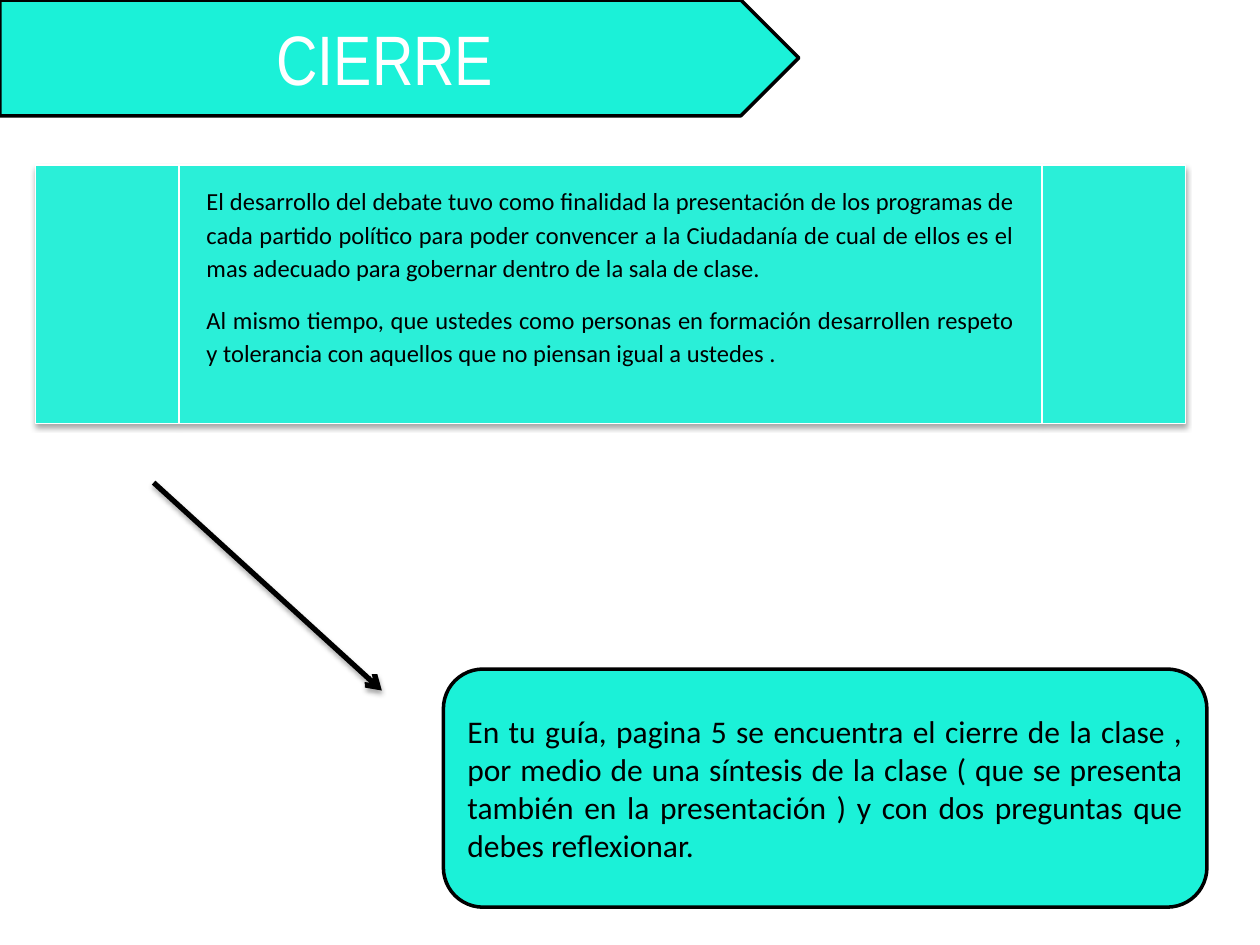
from dataclasses import dataclass
from typing import Optional

from lxml import etree
from pptx import Presentation
from pptx.dml.color import RGBColor
from pptx.enum import shapes, text
from pptx.oxml import ns
from pptx.util import Pt


@dataclass(frozen=True)
class Theme:
    turquoise: str = "1BF1D8"
    soft_turquoise: str = "2AEFD8"
    black: str = "000000"
    white: str = "FFFFFF"
    title_font: str = "Arial Narrow"
    body_font: str = "Calibri"
    title_size: float = 40
    debate_size: float = 14
    guide_size: float = 18


@dataclass(frozen=True)
class Box:
    """A filled shape; lengths in points."""
    kind: shapes.MSO_SHAPE
    left: float
    top: float
    width: float
    height: float
    fill: str
    line: str
    line_width: float
    shadow: bool = False


THEME = Theme()
KINDS = shapes.MSO_SHAPE
ALIGN = text.PP_ALIGN

TITLE_BANNER = Box(KINDS.PENTAGON, 0, 0, 456.5, 66.2, THEME.turquoise, THEME.black, 2)
DEBATE_PANEL = Box(KINDS.FLOWCHART_PREDEFINED_PROCESS, 20.2, 94.3, 657.4, 147.6,
                   THEME.soft_turquoise, THEME.white, 0.75, shadow=True)
GUIDE_BOX = Box(KINDS.ROUNDED_RECTANGLE, 253.4, 382.3, 436.3, 136.1,
                THEME.turquoise, THEME.black, 2)

DEBATE_TEXT = [
    "El desarrollo del debate tuvo como finalidad la presentación de los programas de cada "
    "partido político para poder convencer a la Ciudadanía de cual de ellos es el mas "
    "adecuado para gobernar dentro de la sala de clase.",
    "Al mismo tiempo, que ustedes como personas en formación desarrollen respeto y "
    "tolerancia con aquellos que no piensan igual a ustedes .",
]
GUIDE_TEXT = [
    "En tu guía, pagina 5 se encuentra el cierre de la clase , por medio de una síntesis de "
    "la clase ( que se presenta también en la presentación ) y con dos preguntas que debes "
    "reflexionar.",
]


def add_shadow(shape) -> None:
    """Give a shape or connector a soft shadow straight below it."""
    properties = shape._element.spPr
    effects = properties.find(ns.qn("a:effectLst"))
    if effects is None:
        effects = etree.SubElement(properties, ns.qn("a:effectLst"))
    shadow = etree.SubElement(effects, ns.qn("a:outerShdw"), blurRad=str(Pt(3.1)),
                              dist=str(Pt(1.8)), dir="5400000", rotWithShape="0")
    color = etree.SubElement(shadow, ns.qn("a:srgbClr"), val=THEME.black)
    etree.SubElement(color, ns.qn("a:alpha"), val="35000")


def add_box(slide, box: Box):
    shape = slide.shapes.add_shape(box.kind, Pt(box.left), Pt(box.top),
                                   Pt(box.width), Pt(box.height))
    shape.fill.solid()
    shape.fill.fore_color.rgb = RGBColor.from_string(box.fill)
    shape.line.color.rgb = RGBColor.from_string(box.line)
    shape.line.width = Pt(box.line_width)
    shape.shadow.inherit = False
    if box.shadow:
        add_shadow(shape)
    return shape


def write(shape, paragraphs: list[str], *, font: str, size: float,
          color: str = THEME.black, align: text.PP_ALIGN = ALIGN.JUSTIFY,
          anchor: text.MSO_ANCHOR = text.MSO_ANCHOR.MIDDLE,
          line_spacing: Optional[float] = None, space_after: float = 0) -> None:
    frame = shape.text_frame
    frame.word_wrap = True
    frame.vertical_anchor = anchor
    for index, content in enumerate(paragraphs):
        paragraph = frame.add_paragraph() if index else frame.paragraphs[0]
        paragraph.alignment = align
        paragraph.line_spacing = line_spacing
        paragraph.space_after = Pt(space_after)
        run = paragraph.add_run()
        run.text = content
        run.font.name = font
        run.font.size = Pt(size)
        run.font.color.rgb = RGBColor.from_string(color)


def add_arrow(slide, start: tuple[float, float], end: tuple[float, float],
              width: float) -> None:
    arrow = slide.shapes.add_connector(shapes.MSO_CONNECTOR.STRAIGHT,
                                       *map(Pt, start + end))
    arrow.line.color.rgb = RGBColor.from_string(THEME.black)
    arrow.line.width = Pt(width)
    etree.SubElement(arrow.line._get_or_add_ln(), ns.qn("a:tailEnd"), type="arrow")
    add_shadow(arrow)


def main() -> None:
    presentation = Presentation()
    presentation.slide_width, presentation.slide_height = Pt(720), Pt(540)
    slide = presentation.slides.add_slide(presentation.slide_layouts[6])

    # Title banner
    write(add_box(slide, TITLE_BANNER), ["CIERRE"], font=THEME.title_font,
          size=THEME.title_size, color=THEME.white, align=ALIGN.CENTER)

    # Purpose of the debate
    add_box(slide, DEBATE_PANEL)
    debate = slide.shapes.add_textbox(Pt(110.9), Pt(100.1), Pt(475.9), Pt(130.3))
    write(debate, DEBATE_TEXT, font=THEME.body_font, size=THEME.debate_size,
          anchor=text.MSO_ANCHOR.TOP, line_spacing=1.15, space_after=10)

    # Closing task in the guide
    write(add_box(slide, GUIDE_BOX), GUIDE_TEXT, font=THEME.body_font,
          size=THEME.guide_size)

    # Arrow from the debate to the task
    add_arrow(slide, (87.8, 275.8), (218.2, 394.6), 3)

    presentation.save("out.pptx")


if __name__ == "__main__":
    main()
